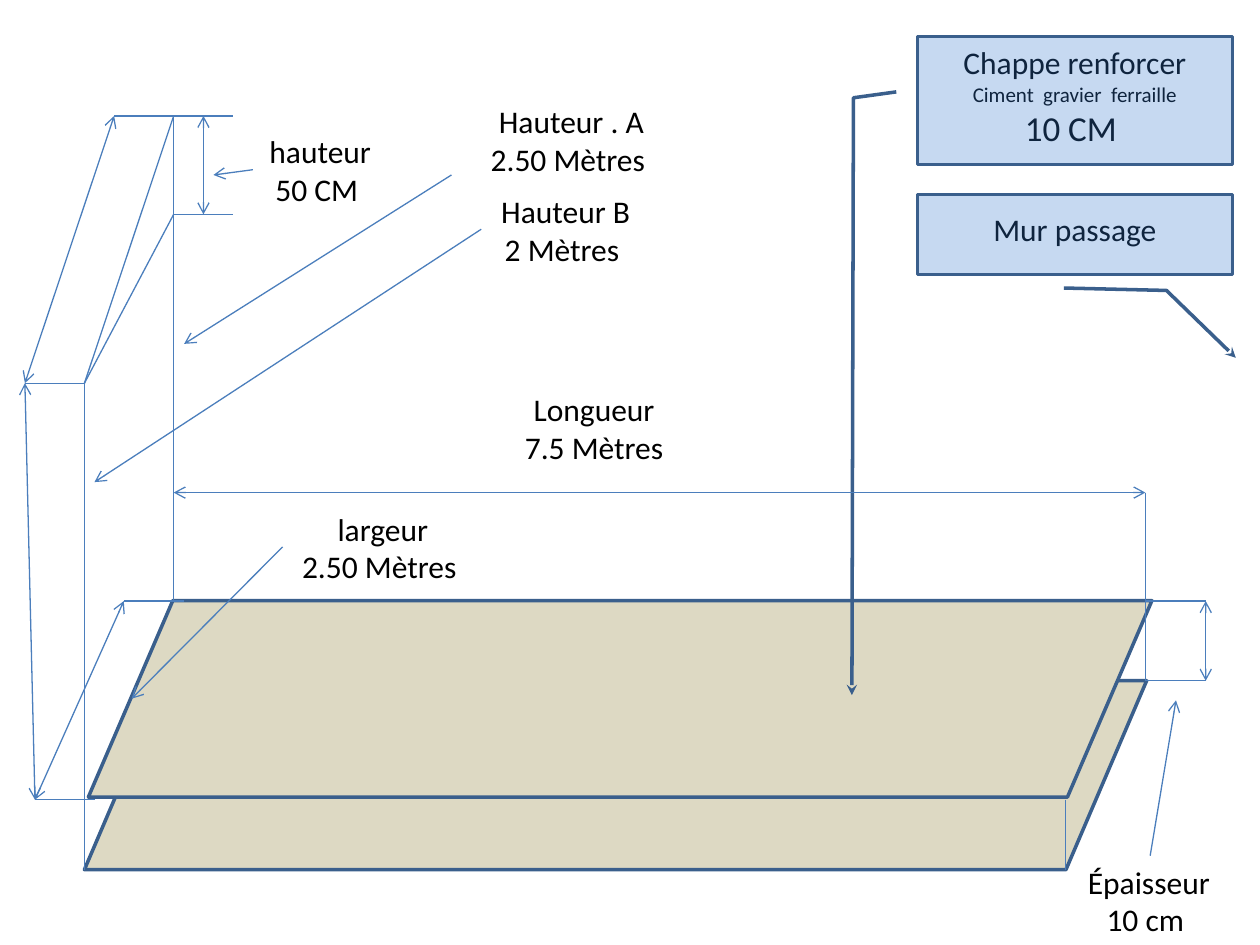
import pptx
import pptx.util
import pptx.dml.color
import pptx.enum.shapes
import pptx.enum.text
import pptx.oxml.ns
import lxml.etree

Pt = pptx.util.Pt
SHAPE = pptx.enum.shapes.MSO_SHAPE
ANCHOR = pptx.enum.text.MSO_ANCHOR

BORDER = "3A5F8C"
THIN = "4B7EBC"
SLAB = "DDD9C3"
CALLOUT = "C6D9F1"
NAVY = "0F243E"

FRONT_X, BACK_X = 48.25, 99.25
RIGHT_FRONT_X, RIGHT_BACK_X = 609, 654.5
THICK_X = 689
TOP_Y, ROOF_Y, WALL_Y = 66.25, 122.5, 219
LENGTH_Y, SLAB_Y, BASE_Y = 281.5, 343.5, 389
FLOOR_Y, BOTTOM_Y = 457, 497


def color(value):
    return pptx.dml.color.RGBColor.from_string(value)


def add_arrow(ln, end, kind):
    lxml.etree.SubElement(ln, pptx.oxml.ns.qn(f"a:{end}"), type=kind)


def add_text(tf, text, size=18, fill="000000", font="Calibri"):
    p = tf.paragraphs[0]
    if p.runs:
        p = tf.add_paragraph()
    p.alignment = pptx.enum.text.PP_ALIGN.CENTER
    r = p.add_run()
    r.text = text
    r.font.name = font
    r.font.size = Pt(size)
    r.font.color.rgb = color(fill)


def add_block(s, kind, box, adjustments, fill):
    sp = s.shapes.add_shape(kind, *map(Pt, box))
    sp.shadow.inherit = False
    for i, value in enumerate(adjustments):
        sp.adjustments[i] = value
    sp.fill.solid()
    sp.fill.fore_color.rgb = color(fill)
    sp.line.color.rgb = color(BORDER)
    sp.line.width = Pt(2)
    return sp


def add_callout(s, box, adjustments, lines, margin_top):
    sp = add_block(s, SHAPE.LINE_CALLOUT_2, box, adjustments, CALLOUT)
    add_arrow(sp.line._get_or_add_ln(), "tailEnd", "stealth")
    tf = sp.text_frame
    tf.word_wrap = True
    tf.vertical_anchor = ANCHOR.TOP
    tf.margin_top = Pt(margin_top)
    for text, size in lines:
        add_text(tf, text, size=size, fill=NAVY)


def add_line(s, x1, y1, x2, y2, ends=()):
    cn = s.shapes.add_connector(
        pptx.enum.shapes.MSO_CONNECTOR.STRAIGHT, *map(Pt, (x1, y1, x2, y2)))
    cn.line.color.rgb = color(THIN)
    cn.line.width = Pt(0.75)
    for end in ends:
        add_arrow(cn.line._get_or_add_ln(), end, "arrow")
    lxml.etree.SubElement(cn._element.spPr, pptx.oxml.ns.qn("a:effectLst"))


def add_label(s, x, y, width, lines):
    sp = s.shapes.add_textbox(Pt(x), Pt(y), Pt(width), Pt(51))
    tf = sp.text_frame
    tf.word_wrap = False
    tf.auto_size = pptx.enum.text.MSO_AUTO_SIZE.SHAPE_TO_FIT_TEXT
    tf.vertical_anchor = ANCHOR.MIDDLE
    for text in lines:
        add_text(tf, text)


def main():
    prs = pptx.Presentation()
    prs.slide_width, prs.slide_height = Pt(720), Pt(540)
    s = prs.slides.add_slide(prs.slide_layouts[6])

    add_block(s, SHAPE.PARALLELOGRAM, (48.25, BASE_Y, 607, 108), [0.427], SLAB)
    add_block(s, SHAPE.PARALLELOGRAM, (50.5, 343.25, 607.75, 112.25), [0.43], SLAB)

    add_callout(s, (524.25, 20.75, 180, 73.25),
                [0.434, -0.067, 0.48, -0.203, 5.14, -0.208],
                [("Chappe renforcer", 18), ("Ciment  gravier  ferraille", 12),
                 ("10 CM ", 20)], 4)

    edges = [
        (BACK_X, SLAB_Y, BACK_X, TOP_Y),
        (RIGHT_BACK_X, LENGTH_Y, RIGHT_BACK_X, BASE_Y),
        (RIGHT_FRONT_X, FLOOR_Y, RIGHT_FRONT_X, BOTTOM_Y),
        (FRONT_X, WALL_Y, FRONT_X, BOTTOM_Y),
        (BACK_X, ROOF_Y, FRONT_X, WALL_Y),
        (BACK_X, TOP_Y, FRONT_X, WALL_Y),
        (65.25, TOP_Y, 133.25, TOP_Y),
        (BACK_X, ROOF_Y, 133.25, ROOF_Y),
        (14.25, WALL_Y, FRONT_X, WALL_Y),
        (70.75, SLAB_Y, 105, SLAB_Y),
        (20, FLOOR_Y, 54, FLOOR_Y),
        (RIGHT_BACK_X, SLAB_Y, THICK_X, SLAB_Y),
        (RIGHT_BACK_X, BASE_Y, THICK_X, BASE_Y),
    ]
    dimensions = [
        (RIGHT_BACK_X, LENGTH_Y, BACK_X, LENGTH_Y),
        (14.25, WALL_Y, 20, FLOOR_Y),
        (116.25, TOP_Y, 116.25, ROOF_Y),
        (65.25, TOP_Y, 14.25, WALL_Y),
        (THICK_X, SLAB_Y, THICK_X, BASE_Y),
        (20, FLOOR_Y, 70.75, SLAB_Y),
    ]
    pointers = [
        (161.5, 312.5, 75.25, 399.25),
        (275, 131, 54, 275.5),
        (144.5, 97, 122, 100),
        (258, 100, 105.25, 196.5),
        (657.25, 489, 672, 400.25),
    ]
    for group, ends in ((edges, ()), (dimensions, ("headEnd", "tailEnd")),
                        (pointers, ("tailEnd",))):
        for points in group:
            add_line(s, *points, ends=ends)

    add_callout(s, (524.25, 111.25, 180, 45.5),
                [1.172, 0.465, 1.203, 0.791, 2.048, 1.011],
                [("Mur passage", 18)], 9)

    labels = [
        (609, 489, 95, ("Épaisseur", "10 cm ")),
        (289.5, 219, 100, ("Longueur", "7.5 Mètres")),
        (269, 54.5, 115, ("Hauteur . A", "2.50 Mètres ")),
        (275, 105.75, 96.5, ("Hauteur B", "2 Mètres ")),
        (144.75, 71.5, 76.5, ("hauteur", "50 CM ")),
        (161.25, 287.25, 115, ("largeur", "2.50 Mètres ")),
    ]
    for label in labels:
        add_label(s, *label)

    prs.save("out.pptx")


if __name__ == "__main__":
    main()
